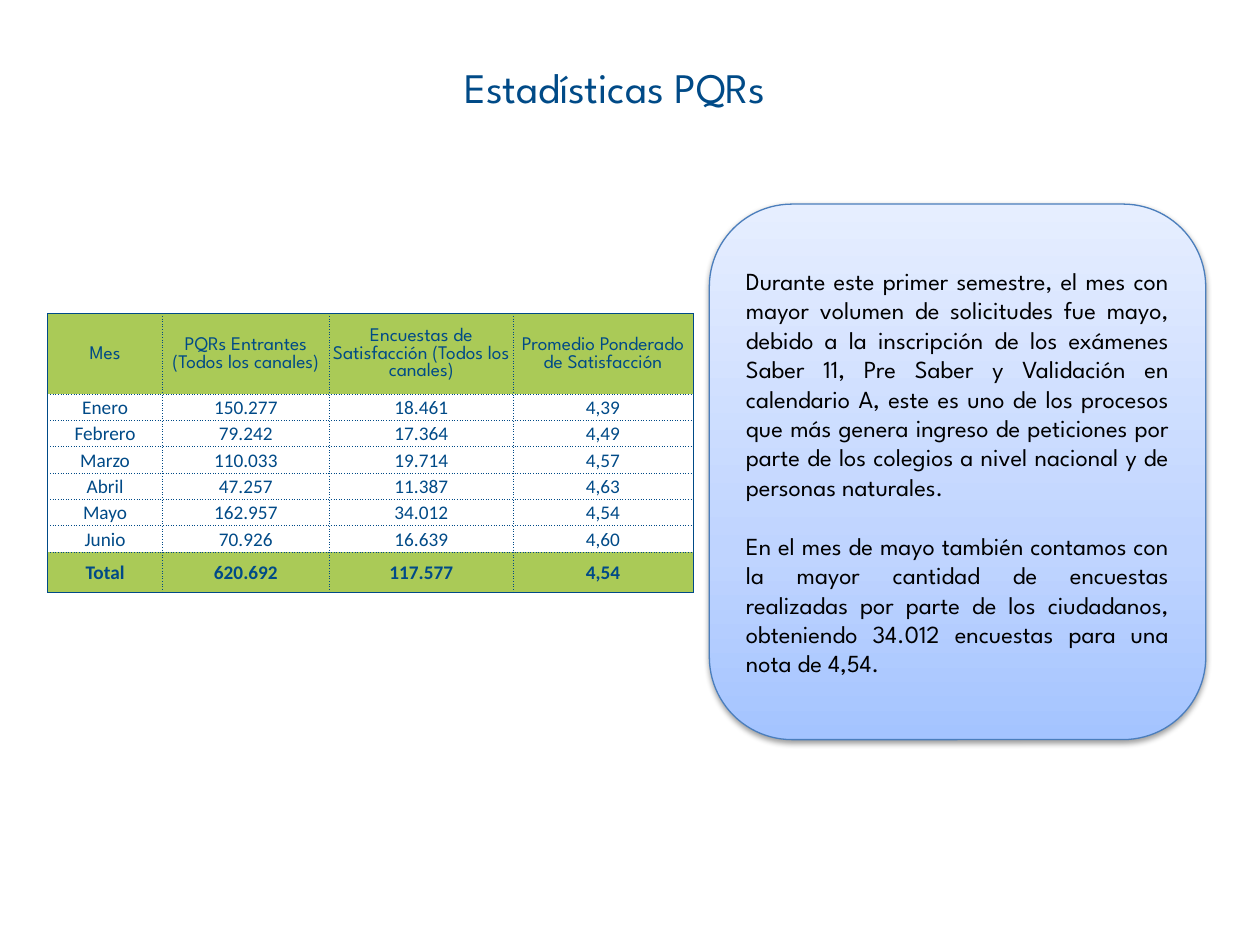
from copy import deepcopy
from dataclasses import dataclass

from lxml import etree
from pptx import Presentation
from pptx.dml.color import RGBColor
from pptx.enum.shapes import MSO_SHAPE
from pptx.enum.text import MSO_ANCHOR, PP_ALIGN
from pptx.oxml.ns import qn
from pptx.util import Inches, Pt

CENTER, JUSTIFY = PP_ALIGN.CENTER, PP_ALIGN.JUSTIFY
MIDDLE = MSO_ANCHOR.MIDDLE
ROUNDED = MSO_SHAPE.ROUNDED_RECTANGLE
TITLE_ONLY = 5


@dataclass(frozen=True)
class Theme:
    heading_font: str = "League Spartan"
    number_font: str = "Calibri"
    navy: str = "004A87"
    green: str = "AACA57"
    black: str = "000000"
    outline: str = "4B7EBC"
    gradient: tuple = ((0, "A4C4FF"), (0.35, "BFD4FF"), (1, "E6EEFF"))
    title_size: int = 24
    body_size: int = 14
    table_size: int = 11


THEME = Theme()

TITLE_BOX = (3.8, 3.87, 90, 10.53)
TABLE_BOX = (3.8, 33.2, 51.2, 29.5)
NOTE_BOX = (56.3, 21.6, 39.4, 56.67)

COLUMN_SHARES = (0.91, 1.33, 1.46, 1.43)
ROW_SHARES = (0.64, *[0.21] * 6, 0.32)

TABLE_ROWS = (
    ("Mes", "PQRs Entrantes (Todos los canales)",
     "Encuestas de Satisfacción (Todos los canales)",
     "Promedio Ponderado de Satisfacción"),
    ("Enero", "150.277", "18.461", "4,39"),
    ("Febrero", "79.242", "17.364", "4,49"),
    ("Marzo", "110.033", "19.714", "4,57"),
    ("Abril", "47.257", "11.387", "4,63"),
    ("Mayo", "162.957", "34.012", "4,54"),
    ("Junio", "70.926", "16.639", "4,60"),
    ("Total", "620.692", "117.577", "4,54"),
)

NOTE_PARAGRAPHS = (
    "Durante este primer semestre, el mes con mayor volumen de solicitudes fue "
    "mayo, debido a la inscripción de los exámenes Saber 11, Pre Saber y "
    "Validación en calendario A, este es uno de los procesos que más genera "
    "ingreso de peticiones por parte de los colegios a nivel nacional y de "
    "personas naturales.",
    "En el mes de mayo también contamos con la mayor cantidad de encuestas "
    "realizadas por parte de los ciudadanos, obteniendo 34.012 encuestas para "
    "una nota de 4,54.",
)


def place(prs, box):
    sides = (prs.slide_width, prs.slide_height) * 2
    return [int(side * share / 100) for side, share in zip(sides, box)]


def format_paragraph(p, size, color, align, font=THEME.heading_font, bold=False):
    p.alignment = align
    p.font.name = font
    p.font.size = Pt(size)
    p.font.bold = bold
    p.font.color.rgb = RGBColor.from_string(color)


def add_color(parent, color):
    fill = etree.SubElement(parent, qn("a:solidFill"))
    return etree.SubElement(fill, qn("a:srgbClr"), val=color)


def set_borders(cell, outer_sides):
    tcPr = cell._tc.get_or_add_tcPr()
    for i, side in enumerate("LRTB"):
        ln = etree.Element(qn(f"a:ln{side}"), w=str(Pt(0.5)))
        add_color(ln, THEME.navy)
        dash = "solid" if side in outer_sides else "sysDot"
        etree.SubElement(ln, qn("a:prstDash"), val=dash)
        tcPr.insert(i, ln)


def add_title(s, box):
    title = s.shapes.title
    title.left, title.top, title.width, title.height = box
    tf = title.text_frame
    tf.text = "Estadísticas PQRs"
    tf.vertical_anchor = MIDDLE
    format_paragraph(tf.paragraphs[0], THEME.title_size, THEME.navy, CENTER)


def add_statistics(s, box):
    left, top, width, height = box
    last_row, last_col = len(ROW_SHARES) - 1, len(COLUMN_SHARES) - 1
    table = s.shapes.add_table(last_row + 1, last_col + 1, *box).table
    table.first_row = table.horz_banding = False
    for column, share in zip(table.columns, COLUMN_SHARES):
        column.width = int(width * share / sum(COLUMN_SHARES))
    for row, share in zip(table.rows, ROW_SHARES):
        row.height = int(height * share / sum(ROW_SHARES))
    for i, values in enumerate(TABLE_ROWS):
        for j, value in enumerate(values):
            cell = table.cell(i, j)
            cell.text = value
            cell.vertical_anchor = MIDDLE
            cell.margin_left = cell.margin_right = cell.margin_top = Inches(0.01)
            cell.margin_bottom = 0
            if i in (0, last_row):
                cell.fill.solid()
                cell.fill.fore_color.rgb = RGBColor.from_string(THEME.green)
            else:
                cell.fill.background()
            edges = {"L": j == 0, "R": j == last_col,
                     "T": i == 0, "B": i == last_row}
            set_borders(cell, [side for side, outer in edges.items() if outer])
            font = THEME.heading_font if i == 0 else THEME.number_font
            format_paragraph(cell.text_frame.paragraphs[0], THEME.table_size,
                             THEME.navy, CENTER, font, i == last_row)


def fill_gradient(shape):
    fill = shape.fill
    fill.gradient()
    fill.gradient_angle = 90
    stops = shape._element.spPr.find(".//" + qn("a:gsLst"))
    stops.append(deepcopy(stops[-1]))
    for stop, (position, color) in zip(fill.gradient_stops, THEME.gradient):
        stop.position = position
        stop.color.rgb = RGBColor.from_string(color)


def add_shadow(shape):
    shape.shadow.inherit = False
    effects = shape._element.spPr.find(qn("a:effectLst"))
    shadow = etree.SubElement(effects, qn("a:outerShdw"), blurRad=str(Pt(3.1)),
                              dist=str(Pt(1.6)), dir="5400000", rotWithShape="0")
    etree.SubElement(add_shadow_color(shadow), qn("a:alpha"), val="38000")


def add_shadow_color(shadow):
    return etree.SubElement(shadow, qn("a:srgbClr"), val=THEME.black)


def add_note(s, box):
    note = s.shapes.add_shape(ROUNDED, *box)
    fill_gradient(note)
    note.line.color.rgb = RGBColor.from_string(THEME.outline)
    note.line.width = Pt(0.75)
    add_shadow(note)
    tf = note.text_frame
    tf.word_wrap = True
    tf.vertical_anchor = MIDDLE
    for i, text in enumerate(NOTE_PARAGRAPHS):
        p = tf.add_paragraph() if i else tf.paragraphs[0]
        p.text = text
        if i:
            p.space_before = Pt(THEME.body_size * 1.2)
        format_paragraph(p, THEME.body_size, THEME.black, JUSTIFY)


def main():
    prs = Presentation()
    prs.slide_width, prs.slide_height = Inches(10), Inches(7.5)
    s = prs.slides.add_slide(prs.slide_layouts[TITLE_ONLY])
    add_title(s, place(prs, TITLE_BOX))
    add_statistics(s, place(prs, TABLE_BOX))
    add_note(s, place(prs, NOTE_BOX))
    prs.save("out.pptx")


if __name__ == "__main__":
    main()
